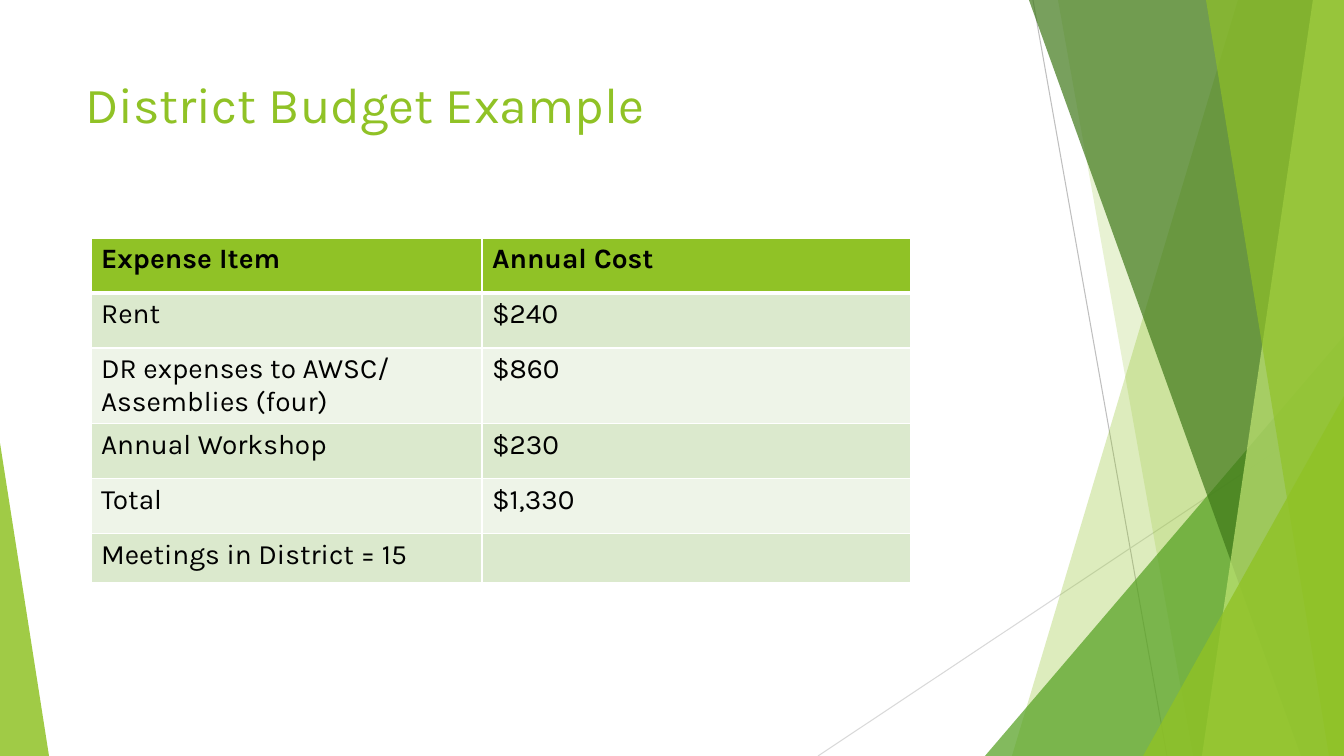
from lxml import etree
from pptx import Presentation, util as u
from pptx.dml.color import RGBColor
from pptx.enum import shapes, text
from pptx.oxml import ns

W, H = 1344, 756
PX = 12192000 / W
GREEN, BLACK, WHITE = "90C226", "000000", "FFFFFF"


def px(*lengths):
    return [u.Emu(round(n * PX)) for n in lengths]


def paint(fill, color, alpha=100):
    fill.solid()
    fill.fore_color.rgb = RGBColor.from_string(color)
    if alpha < 100:
        clr = fill._xPr.find(".//" + ns.qn("a:srgbClr"))
        etree.SubElement(clr, ns.qn("a:alpha"), val=str(alpha * 1000))


prs = Presentation()
prs.slide_width, prs.slide_height = px(W, H)
s = prs.slides.add_slide(prs.slide_layouts[5])

# Thin crossing lines
for x1, y1, x2, y2, color in [(1033, 0, 1167, H, "BFBFBF"),
                              (W, 406, 818, H, "D9D9D9")]:
    line = s.shapes.add_connector(shapes.MSO_CONNECTOR.STRAIGHT, *px(x1, y1, x2, y2))
    line.line.width = u.Pt(0.75)
    paint(line.line.fill, color)
    etree.SubElement(line._element.spPr, ns.qn("a:effectLst"))

# Green facets: bands give top and bottom x of the slanted left edge,
# triangles give left, top, width and the place of the apex
facets = [
    ("band", (1238, 1012), GREEN, 30),
    ("band", (1058, 1193), GREEN, 20),
    ("triangle", (985, 336, 359, 1), "54A021", 72),
    ("band", (1029, 1301), "3F7819", 70),
    ("band", (1313, 1202), "C0E474", 70),
    ("band", (1206, 1329), GREEN, 65),
    ("triangle", (1143, 396, 201, 1), GREEN, 80),
    ("triangle", (0, 443, 49, 0), GREEN, 85),
]
for kind, place, color, alpha in facets:
    if kind == "band":
        top, bottom = place
        fb = s.shapes.build_freeform(top, 0, scale=PX)
        fb.add_line_segments([(W, 0), (W, H), (bottom, H)], close=True)
        sp = fb.convert_to_shape()
    else:
        left, top, width, apex = place
        sp = s.shapes.add_shape(shapes.MSO_SHAPE.ISOSCELES_TRIANGLE,
                                *px(left, top, width, H - top))
        sp.adjustments[0] = apex
    paint(sp.fill, color, alpha)
    sp.line.fill.background()
    sp.shadow.inherit = False

# Title
title = s.shapes.title
title.left, title.top, title.width, title.height = px(75, 68, 948, 145)
tf = title.text_frame
tf.text = "District Budget Example"
for name, value in {"vertical_anchor": text.MSO_ANCHOR.TOP, "word_wrap": True,
                    "auto_size": text.MSO_AUTO_SIZE.NONE}.items():
    setattr(tf, name, value)
p = tf.paragraphs[0]
p.alignment = text.PP_ALIGN.LEFT
r = p.runs[0]
for name, value in {"name": "Karla", "size": u.Pt(36)}.items():
    setattr(r.font, name, value)
paint(r.font.fill, GREEN)

# Budget table
rows = [
    ("Expense Item", "Annual Cost"),
    ("Rent", "$240"),
    ("DR expenses to AWSC/ Assemblies (four)", "$860"),
    ("Annual Workshop", "$230"),
    ("Total", "$1,330"),
    ("Meetings in District = 15", ""),
]
widths = [391, 429]
heights = [55, 55, 55, 55, 55, 49]
table = s.shapes.add_table(len(rows), len(widths),
                           *px(91, 238, sum(widths), sum(heights))).table
for col, width in zip(table.columns, px(*widths)):
    col.width = width
for row, height in zip(table.rows, px(*heights)):
    row.height = height

for i, row in enumerate(rows):
    for j, words in enumerate(row):
        cell = table.cell(i, j)
        tcPr = cell._tc.get_or_add_tcPr()
        for side in "LRTB":
            heavy = (i, side) in [(0, "B"), (1, "T")]
            ln = etree.SubElement(tcPr, ns.qn("a:ln" + side),
                                  w=str(u.Pt(3 if heavy else 1)))
            solid = etree.SubElement(ln, ns.qn("a:solidFill"))
            etree.SubElement(solid, ns.qn("a:srgbClr"), val=WHITE)
        paint(cell.fill, GREEN if i == 0 else "DBE9CD" if i % 2 else "EEF4E8")
        if words:
            r = cell.text_frame.paragraphs[0].add_run()
            r.text = words
            for name, value in {"name": "Karla", "size": u.Pt(20), "bold": i == 0}.items():
                setattr(r.font, name, value)
            paint(r.font.fill, BLACK)

prs.save("out.pptx")
